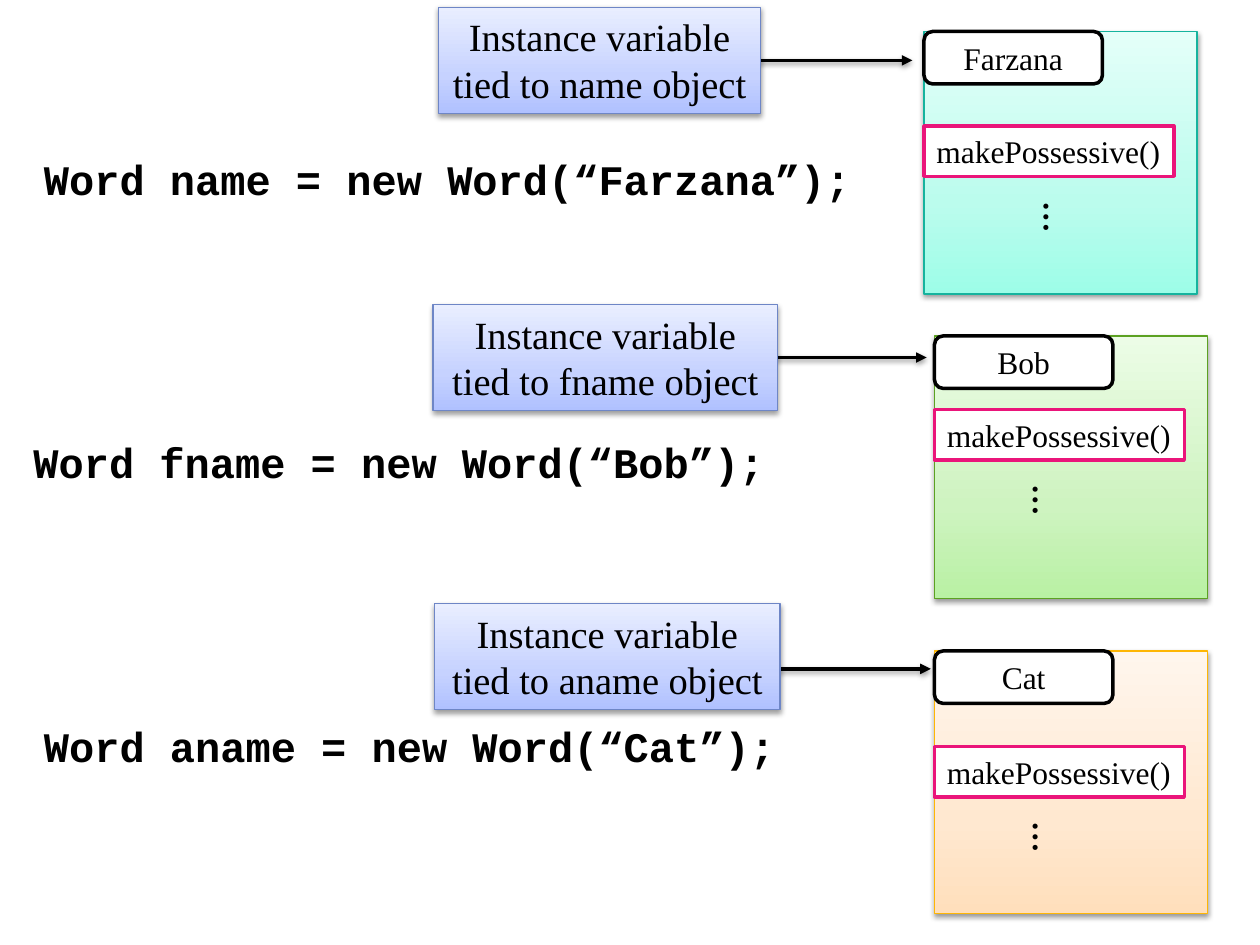
from lxml import etree
from pptx import Presentation, util as u
from pptx.dml.color import RGBColor
from pptx.enum import shapes, text
from pptx.oxml import ns

COLS, ROWS = 120, 90
CELL = u.Inches(10) / COLS
KIND = shapes.MSO_SHAPE
MID = text.PP_ALIGN.CENTER
INK, PINK, WHITE = "000000", "EA157A", "FFFFFF"
SERIF = dict(name="Times New Roman", size=u.Pt(18))
LARGE = dict(SERIF, size=u.Pt(22))
CODE = dict(name="Courier New", size=u.Pt(24), bold=True)
BLUE = ("B0C1FF", "C6D2FF", "E9EEFF")


def grid(*cells):
    """Turn grid cells into lengths."""
    return [u.Emu(round(n * CELL)) for n in cells]


def tint(hue):
    """Turn a hex string into a colour."""
    return RGBColor.from_string(hue)


def node(root, tag, **attrs):
    """Add a drawing element with its attributes."""
    return etree.SubElement(root, ns.qn("a:" + tag), {k: str(v) for k, v in attrs.items()})


def shade(effect):
    """Put a soft drop shadow into an effect list."""
    drop = node(effect, "outerShdw", blurRad=u.Pt(3.1), dist=u.Pt(1.6),
                dir=5400000, rotWithShape=0)
    node(node(drop, "srgbClr", val=INK), "alpha", val=38000)


def write(shape, words, form, align=None, wrap=False, anchor=text.MSO_ANCHOR.TOP):
    """Set the words of a shape and their format."""
    frame = shape.text_frame
    frame.word_wrap, frame.vertical_anchor = wrap, anchor
    line = frame.paragraphs[0]
    line.alignment = align or text.PP_ALIGN.LEFT
    run = line.add_run()
    run.text = words
    for key, value in form.items():
        setattr(run.font, key, value)
    run.font.color.rgb = tint(INK)


def panel(home, box, fill, edge, width=2, kind=KIND.RECTANGLE):
    """Draw a plain box, or a shaded one when fill holds three hues."""
    shape = home.add_shape(kind, *grid(*box))
    shape.shadow.inherit = False
    shape.line.color.rgb, shape.line.width = tint(edge), u.Pt(width)
    if isinstance(fill, str):
        shape.fill.solid()
        shape.fill.fore_color.rgb = tint(fill)
        return shape
    shape.fill.gradient()
    shape.fill.gradient_angle = 90
    stops = shape.element.spPr.find(".//" + ns.qn("a:gsLst"))
    stops.clear()
    for spot, hue in zip((0, 35000, 100000), fill):
        node(node(stops, "gs", pos=spot), "srgbClr", val=hue)
    shade(shape.element.spPr.find(ns.qn("a:effectLst")))
    return shape


def label(home, box, words, form):
    """Place free text."""
    shape = home.add_textbox(*grid(*box))
    write(shape, words, form)
    return shape


def card(slide, x, y, word, drop, dots, fill, edge):
    """Draw an object with its value, its method and an ellipsis."""
    home = slide.shapes.add_group_shape().shapes
    panel(home, (x, y, 26, 25), fill, edge, 0.75)
    head = panel(home, (x, y, 17, 5), WHITE, INK, kind=KIND.ROUNDED_RECTANGLE)
    write(head, word, SERIF, MID, True, text.MSO_ANCHOR.MIDDLE)
    method = panel(home, (x, y + drop, 23.8, 4.8), WHITE, PINK)
    write(method, "makePossessive()", SERIF)
    more = label(home, (x + dots, y + drop + 6, 6, 3.4), "…", dict(SERIF, bold=True))
    more.text_frame._txBody.bodyPr.set("vert", "vert")


def arrow(slide, x, y, span):
    """Draw a level arrow to the right."""
    line = slide.shapes.add_connector(shapes.MSO_CONNECTOR.STRAIGHT, *grid(x, y, x + span, y))
    line.line.color.rgb, line.line.width = tint(INK), u.Pt(2)
    node(line.line._get_or_add_ln(), "tailEnd", type="triangle")
    shade(node(line.element.spPr, "effectLst"))


def note(slide, x, y, wide, name):
    """Draw a callout that names a variable."""
    shape = panel(slide.shapes, (x, y, wide, 10.1), BLUE, "6E86C6", 0.75)
    write(shape, f"Instance variable tied to {name} object", LARGE, MID, True)


def main():
    """Build the slide."""
    deck = Presentation()
    deck.slide_width, deck.slide_height = grid(COLS, ROWS)
    slide = deck.slides.add_slide(deck.slide_layouts[6])
    items = [
        ("name", "Farzana", (3, 14, 79.8), (88, 3), (9, 9),
         ("9DFDE8", "BBFCED", "E4FFF9"), "16B39E", (72.2, 5.75), (41.75, 0.7, 30.7)),
        ("fname", "Bob", (2, 41, 72.6), (89, 32), (7, 7),
         ("B9F1A4", "CEF3C0", "ECFCE6"), "5CA122", (73.55, 34.05), (41.25, 29, 32.8)),
        ("aname", "Cat", (3, 68, 72.6), (89, 62), (9.1, 7),
         ("FFDFBC", "FFE8D0", "FFF6ED"), "FEB604", (73.95, 63.7), (41.4, 57.5, 32.9)),
    ]
    for name, word, code, spot, gaps, fill, edge, start, box in items:
        label(slide.shapes, (*code, 6), f"Word {name} = new Word(“{word}”);", CODE)
        card(slide, *spot, word, *gaps, fill, edge)
        arrow(slide, *start, 14.7)
        note(slide, *box, name)
    deck.save("out.pptx")


if __name__ == "__main__":
    main()
